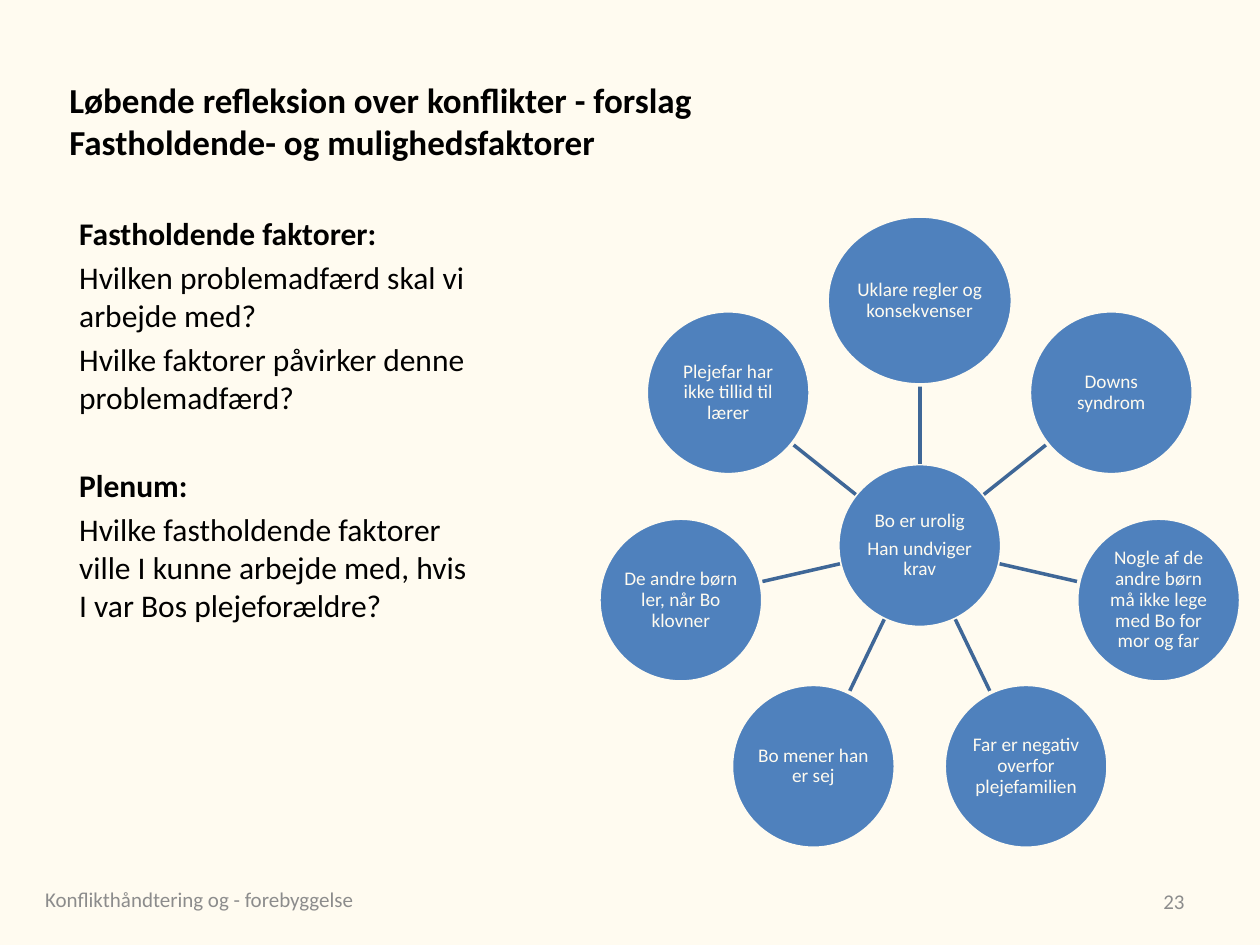
"""Build a slide on conflict factors with a hub-and-spoke diagram."""
import math

import pptx
import pptx.chart.data
import pptx.dml.color
import pptx.enum.shapes
import pptx.enum.text
import pptx.oxml
import pptx.util

TITLE = "Løbende refleksion over konflikter - forslag\vFastholdende- og mulighedsfaktorer"
QUESTIONS = [
    ("Fastholdende faktorer:", True),
    ("Hvilken problemadfærd skal vi arbejde med?", False),
    ("Hvilke faktorer påvirker denne problemadfærd?", False),
    ("Plenum:", True),
    ("Hvilke fastholdende faktorer ville I kunne arbejde med, hvis I var Bos plejeforældre?", False),
]
HUB = "Bo er urolig\nHan undviger krav"
FACTORS = [
    "Uklare regler og konsekvenser",
    "Downs syndrom",
    "Nogle af de andre børn må ikke lege med Bo for mor og far",
    "Far er negativ overfor plejefamilien",
    "Bo mener han er sej",
    "De andre børn ler, når Bo klovner",
    "Plejefar har ikke tillid til lærer",
]
FOOTER = "Konflikthåndtering og - forebyggelse"
NUMBER = "23"

BLACK, GREY, PAPER, BLUE, SPOKE = "000000", "8C8C8C", "FFFBF0", "4F81BD", "3F6797"
CENTER = (73, 43.3)
RING, DIAMETER = 19.45, 13
TOP_SIZE = (14.7, 13.4)
ALIGN = pptx.enum.text.PP_ALIGN
MIDDLE = pptx.enum.text.MSO_ANCHOR.MIDDLE

deck = pptx.Presentation()
deck.slide_width, deck.slide_height = pptx.util.Inches(10), pptx.util.Inches(7.5)
page = deck.slides.add_slide(deck.slide_layouts[5])


def share(*percents):
    """Turn percentages of the slide width into lengths."""
    return [round(deck.slide_width * percent / 100) for percent in percents]


def color(value):
    """Return the colour for a hex string."""
    return pptx.dml.color.RGBColor.from_string(value)


def style(para, size, value, bold=False, align=ALIGN.LEFT):
    """Format a paragraph and all its runs."""
    para.alignment = align
    for span in para.runs:
        span.font.name, span.font.size = "Calibri", pptx.util.Pt(size)
        span.font.bold, span.font.color.rgb = bold, color(value)


def add_text(place, text, anchor):
    """Add a wrapping text box and return its frame."""
    frame = page.shapes.add_textbox(*share(*place)).text_frame
    frame.word_wrap, frame.vertical_anchor = True, anchor
    frame.text = text
    return frame


def add_spoke(angle, inner, outer):
    """Draw a line outwards from the hub."""
    ends = [
        CENTER[axis] + radius * turn
        for radius in (inner, outer)
        for axis, turn in enumerate((math.sin(angle), -math.cos(angle)))
    ]
    line = page.shapes.add_connector(pptx.enum.shapes.MSO_CONNECTOR.STRAIGHT, *share(*ends))
    line.line.color.rgb, line.line.width = color(SPOKE), pptx.util.Pt(2)
    line._element.spPr.append(pptx.oxml.parse_xml(
        '<a:effectLst xmlns:a="http://schemas.openxmlformats.org/drawingml/2006/main"/>'))


def add_circle(x, y, width, height, text):
    """Draw a labelled ellipse around a midpoint."""
    circle = page.shapes.add_shape(
        pptx.enum.shapes.MSO_SHAPE.OVAL, *share(x - width / 2, y - height / 2, width, height))
    circle.shadow.inherit = False
    circle.fill.solid()
    circle.fill.fore_color.rgb = color(BLUE)
    circle.line.color.rgb, circle.line.width = color(PAPER), pptx.util.Pt(2)
    frame = circle.text_frame
    frame.word_wrap, frame.vertical_anchor = True, MIDDLE
    frame.margin_left = frame.margin_right = pptx.util.Inches(0.01)
    frame.margin_top = frame.margin_bottom = pptx.util.Inches(0.01)
    frame.text = text
    for para in frame.paragraphs:
        style(para, 11, PAPER, align=ALIGN.CENTER)
        para.line_spacing, para.space_after = 0.9, pptx.util.Pt(3.85)


page.background.fill.solid()
page.background.fill.fore_color.rgb = color(PAPER)

title = page.shapes.title
title.left, title.top, title.width, title.height = share(4.5, 3.3, 90, 12.5)
title.text_frame.text = TITLE
title.text_frame.vertical_anchor = MIDDLE
style(title.text_frame.paragraphs[0], 20, BLACK, bold=True)

body = add_text((5.3, 16.5, 33.9, 50.3), "\n".join(text for text, _ in QUESTIONS),
                pptx.enum.text.MSO_ANCHOR.TOP)
for index, (para, (_, heading)) in enumerate(zip(body.paragraphs, QUESTIONS)):
    style(para, 18, BLACK, bold=heading)
    para.space_before = pptx.util.Pt(29 if heading and index else 3.6)

add_circle(*CENTER, DIAMETER, DIAMETER, HUB)
for index, factor in enumerate(FACTORS):
    angle = 2 * math.pi * index / len(FACTORS)
    width, height = (DIAMETER, DIAMETER) if index else TOP_SIZE
    add_spoke(angle, DIAMETER / 2, RING - height / 2)
    add_circle(CENTER[0] + RING * math.sin(angle), CENTER[1] - RING * math.cos(angle),
               width, height, factor)

for place, text, align in [
    ((2.6, 69.4, 31.7, 4), FOOTER, ALIGN.LEFT),
    ((71.7, 69.5, 23.3, 4), NUMBER, ALIGN.RIGHT),
]:
    style(add_text(place, text, MIDDLE).paragraphs[0], 12, GREY, align=align)

deck.save("out.pptx")
